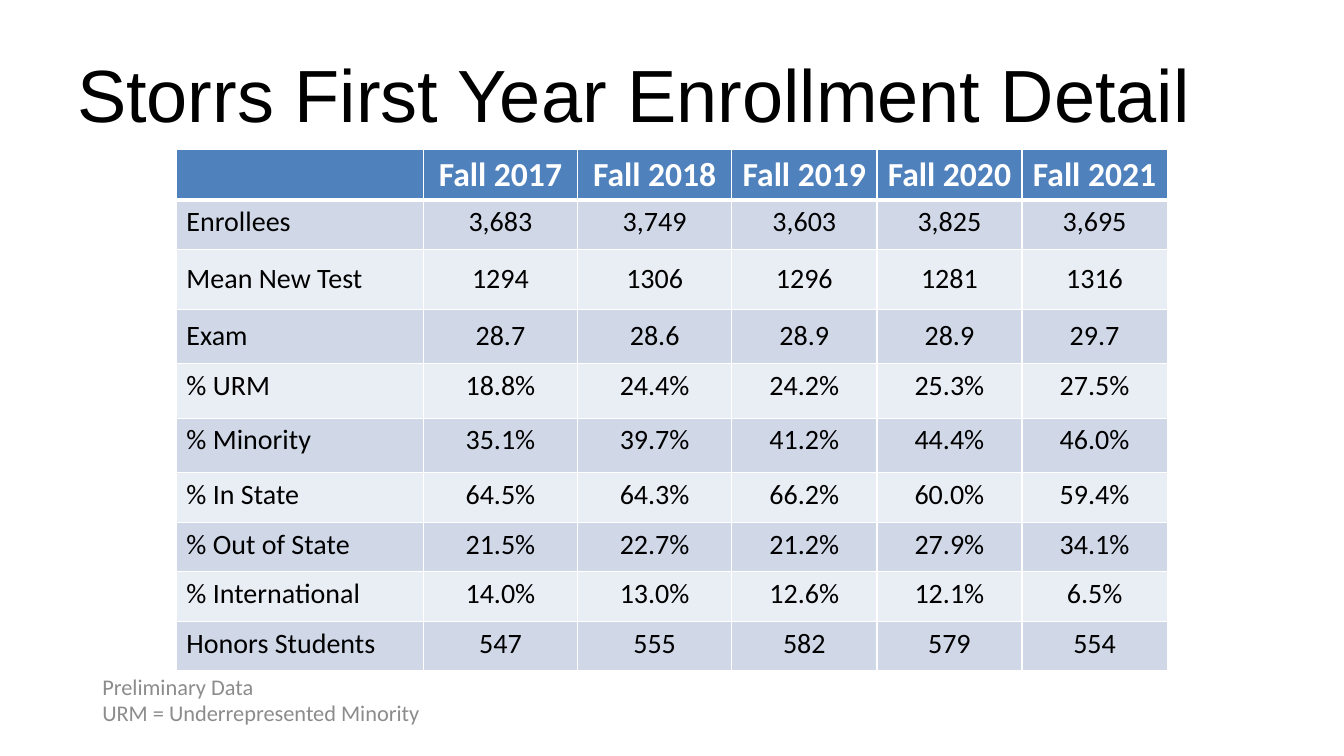
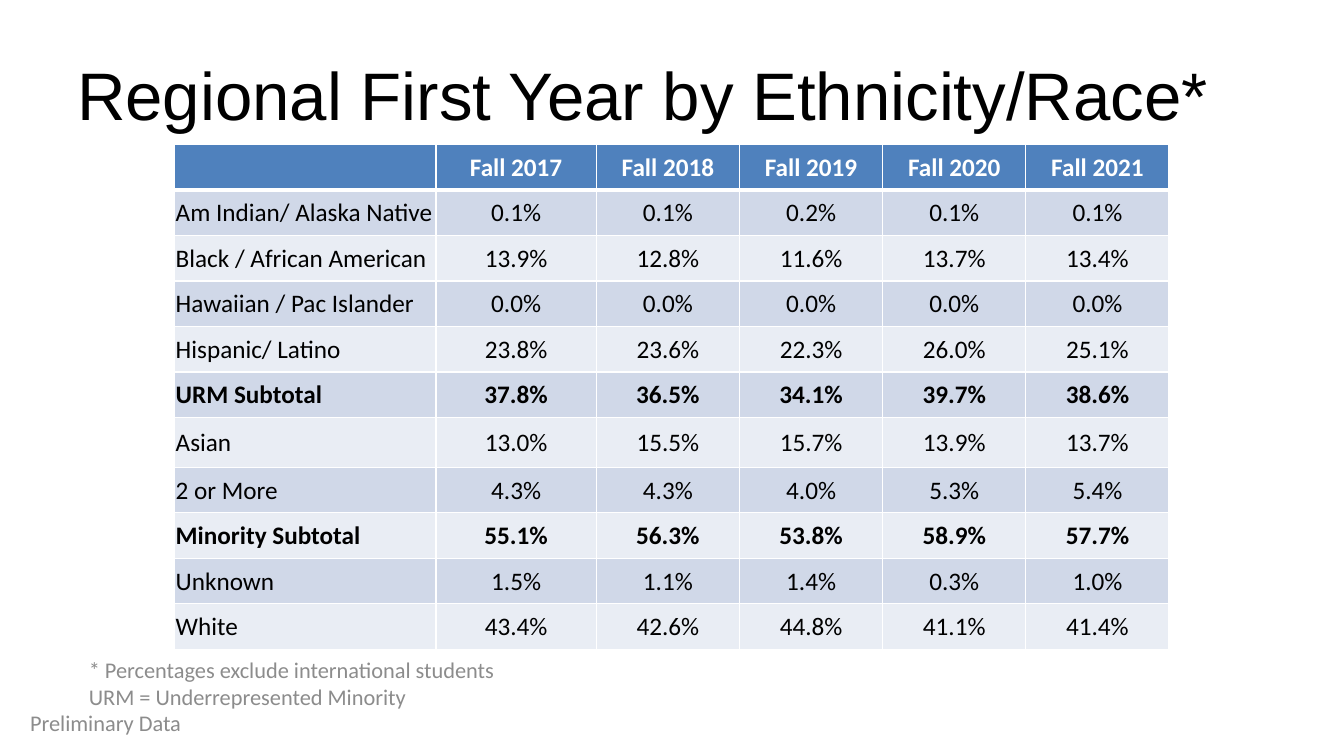
import pptx
import pptx.util
import pptx.dml.color
import pptx.enum.text
import lxml.etree

RGB = pptx.dml.color.RGBColor
BLACK = RGB(0x00, 0x00, 0x00)
WHITE = RGB(0xFF, 0xFF, 0xFF)
BLUE = RGB(0x4F, 0x81, 0xBD)
BANDS = (RGB(0xE9, 0xED, 0xF4), RGB(0xD0, 0xD8, 0xE8))
GRAY = RGB(0x8C, 0x8C, 0x8C)

COLS, ROWS = 160, 90
UNIT = pptx.util.Inches(7.5) / ROWS
PLAIN = "{2D5ABB26-0587-4C30-8999-92F81FD0307C}"
ANCHOR = pptx.enum.text.MSO_ANCHOR
ALIGN = pptx.enum.text.PP_ALIGN
YEARS = ["", *(f"Fall {year}" for year in range(2017, 2022))]

DETAIL = [
    ["Enrollees", "3,683", "3,749", "3,603", "3,825", "3,695"],
    ["Mean New Test", "1294", "1306", "1296", "1281", "1316"],
    ["Exam", "28.7", "28.6", "28.9", "28.9", "29.7"],
    ["% URM", "18.8%", "24.4%", "24.2%", "25.3%", "27.5%"],
    ["% Minority", "35.1%", "39.7%", "41.2%", "44.4%", "46.0%"],
    ["% In State", "64.5%", "64.3%", "66.2%", "60.0%", "59.4%"],
    ["% Out of State", "21.5%", "22.7%", "21.2%", "27.9%", "34.1%"],
    ["% International", "14.0%", "13.0%", "12.6%", "12.1%", "6.5%"],
    ["Honors Students", "547", "555", "582", "579", "554"],
]

RACE = [
    ["Am Indian/ Alaska Native", "0.1%", "0.1%", "0.2%", "0.1%", "0.1%"],
    ["Black / African American", "13.9%", "12.8%", "11.6%", "13.7%", "13.4%"],
    ["Hawaiian / Pac Islander", "0.0%", "0.0%", "0.0%", "0.0%", "0.0%"],
    ["Hispanic/ Latino", "23.8%", "23.6%", "22.3%", "26.0%", "25.1%"],
    ["URM Subtotal", "37.8%", "36.5%", "34.1%", "39.7%", "38.6%"],
    ["Asian", "13.0%", "15.5%", "15.7%", "13.9%", "13.7%"],
    ["2 or More", "4.3%", "4.3%", "4.0%", "5.3%", "5.4%"],
    ["Minority Subtotal", "55.1%", "56.3%", "53.8%", "58.9%", "57.7%"],
    ["Unknown", "1.5%", "1.1%", "1.4%", "0.3%", "1.0%"],
    ["White", "43.4%", "42.6%", "44.8%", "41.1%", "41.4%"],
]


def grid(*cells):
    return [pptx.util.Emu(round(cell * UNIT)) for cell in cells]


def style(para, face, size, color, bold=False):
    font = para.font
    font.name = face
    font.size = pptx.util.Pt(size)
    font.color.rgb = color
    font.bold = bold


def label(slide, place, lines, face, size, color, anchor):
    frame = slide.shapes.add_textbox(*grid(*place)).text_frame
    frame.word_wrap = True
    frame.vertical_anchor = anchor
    frame.text = "\n".join(lines)
    for para in frame.paragraphs:
        style(para, face, size, color)


def title(slide, text, size):
    label(slide, (8, 3.6, 144, 15), [text], "Arial", size, BLACK, ANCHOR.MIDDLE)


def note(slide, place, *lines):
    label(slide, place, lines, "Calibri", 16, GRAY, ANCHOR.TOP)


def border(cell, top, bottom):
    props = cell._tc.get_or_add_tcPr()
    for side, width in (("L", 1), ("R", 1), ("T", top), ("B", bottom)):
        props.append(lxml.etree.fromstring(
            '<a:ln%s xmlns:a="http://schemas.openxmlformats.org/drawingml/2006/main" w="%d">'
            '<a:solidFill><a:srgbClr val="%s"/></a:solidFill></a:ln%s>'
            % (side, pptx.util.Pt(width), WHITE, side)))


def table(slide, left, top, widths, heights, body, head, size, middle, tight=False):
    data = [YEARS, *body]
    place = grid(left, top, sum(widths), sum(heights))
    chart = slide.shapes.add_table(len(data), len(YEARS), *place).table
    chart._tbl.tblPr.find("{*}tableStyleId").text = PLAIN
    for col, width in zip(chart.columns, grid(*widths)):
        col.width = width
    for row, height in zip(chart.rows, grid(*heights)):
        row.height = height
    for r, row in enumerate(data):
        for c, text in enumerate(row):
            cell = chart.cell(r, c)
            border(cell, 3 if r == 1 else 1, 3 if r == 0 else 1)
            cell.fill.solid()
            cell.fill.fore_color.rgb = BANDS[r % 2] if r else BLUE
            if r in middle:
                cell.vertical_anchor = ANCHOR.MIDDLE
            if tight:
                cell.margin_left = cell.margin_right = cell.margin_top = pptx.util.Inches(0.01)
                cell.margin_bottom = 0
            cell.text = text
            para = cell.text_frame.paragraphs[0]
            para.alignment = ALIGN.CENTER if c else ALIGN.LEFT
            style(para, "Calibri", size if r else head, BLACK if r else WHITE,
                  r == 0 or row[0].endswith("Subtotal"))


def detail(slide):
    title(slide, "Storrs First Year Enrollment Detail", 52.8)
    table(slide, 21, 17.8, [29.4] + [18.36] * 2 + [17.28] * 3,
          [5.9] * 2 + [7.1] + [6.5] * 3 + [5.9] * 4, DETAIL, 24, 20, (2, 3))
    note(slide, (11, 79.5, 48.6, 10.3),
         "Preliminary Data", "URM = Underrepresented Minority")


def race(slide):
    title(slide, "Regional First Year by Ethnicity/Race*", 48)
    table(slide, 20.8, 17.2, [31.1, 19.1] + [17.05] * 4,
          [5.42] * 6 + [5.9] + [5.42] * 4, RACE, 18, 18, range(11), True)
    note(slide, (9.4, 77.5, 53, 7.7),
         "* Percentages exclude international students", "URM = Underrepresented Minority")
    note(slide, (2.4, 83.8, 36, 6.2), "Preliminary Data")


def main():
    deck = pptx.Presentation()
    deck.slide_width, deck.slide_height = grid(COLS, ROWS)
    for build in (detail, race):
        build(deck.slides.add_slide(deck.slide_layouts[6]))
    deck.save("out.pptx")


if __name__ == "__main__":
    main()
